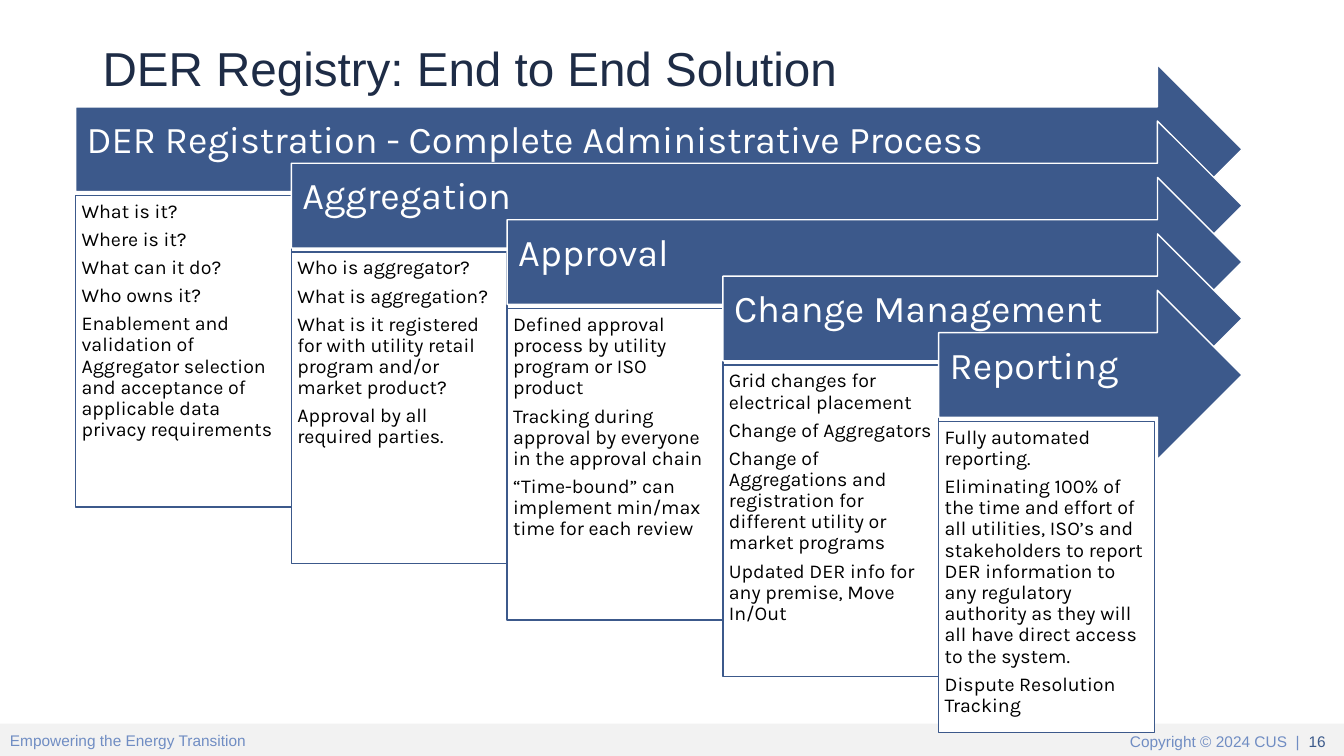
import pptx
import pptx.util
import pptx.dml.color
import pptx.enum.shapes
import pptx.enum.text

Inches, Pt = pptx.util.Inches, pptx.util.Pt
RGBColor = pptx.dml.color.RGBColor
SHAPE = pptx.enum.shapes.MSO_SHAPE
ALIGN = pptx.enum.text.PP_ALIGN
ANCHOR = pptx.enum.text.MSO_ANCHOR

# Content
TITLE = "DER Registry: End to End Solution"
SLOGAN = "Empowering the Energy Transition"
RIGHTS = "Copyright © 2024 CUS  |  "
NUMBER = "16 "
STAGES = [
    ("DER Registration - Complete Administrative Process", [
        "What is it?",
        "Where is it?",
        "What can it do?",
        "Who owns it?",
        "Enablement and validation of Aggregator selection and acceptance "
        "of applicable data privacy requirements",
    ]),
    ("Aggregation", [
        "Who is aggregator?",
        "What is aggregation?",
        "What is it registered for with utility retail program and/or "
        "market product?",
        "Approval by all required parties.",
    ]),
    ("Approval", [
        "Defined approval process by utility program or ISO product",
        "Tracking during approval by everyone in the approval chain",
        "“Time-bound” can implement min/max time for each review",
    ]),
    ("Change Management", [
        "Grid changes for electrical placement",
        "Change of Aggregators",
        "Change of Aggregations and registration for different utility "
        "or market programs",
        "Updated DER info for any premise, Move In/Out",
    ]),
    ("Reporting", [
        "Fully automated reporting.",
        "Eliminating 100% of the time and effort of all utilities, ISO’s and "
        "stakeholders to report DER information to any regulatory authority "
        "as they will all have direct access to the system.",
        "Dispute Resolution Tracking",
    ]),
]

# Colours
WHITE = RGBColor(0xFF, 0xFF, 0xFF)
BLACK = RGBColor(0x00, 0x00, 0x00)
NAVY = RGBColor(0x1E, 0x2C, 0x46)
BLUE = RGBColor(0x3C, 0x59, 0x8B)
PAGE = RGBColor(0x3C, 0x5A, 0x8B)
PALE = RGBColor(0x70, 0x8D, 0xC3)
GREY = RGBColor(0xF2, 0xF2, 0xF2)

# Layout in inches
LEFT, TOP, RIGHT = 0.75, 0.64, 12.32
STEP, DROP = 2.14, 0.56
ARROW, GAP, DETAIL = 1.68, 1.3, 3.09

deck = pptx.Presentation()
deck.slide_width, deck.slide_height = Inches(13.33), Inches(7.5)
slide = deck.slides.add_slide(deck.slide_layouts[6])


def write(shape, paras, size, color, font="Arial", align=ALIGN.LEFT,
          anchor=ANCHOR.TOP, inset=(0.1, 0.05, 0.1, 0.05), line=1.0, after=0):
    """Fill a shape with paragraphs, each a list of (text, colour) or a string."""
    frame = shape.text_frame
    frame.word_wrap = True
    frame.vertical_anchor = anchor
    (frame.margin_left, frame.margin_top,
     frame.margin_right, frame.margin_bottom) = map(Inches, inset)
    for i, runs in enumerate(paras):
        para = frame.add_paragraph() if i else frame.paragraphs[0]
        para.alignment = align
        para.line_spacing = line
        para.space_after = Pt(after)
        for text, tint in [(runs, color)] if isinstance(runs, str) else runs:
            run = para.add_run()
            run.text = text
            run.font.size = Pt(size)
            run.font.name = font
            run.font.color.rgb = tint


def draw(kind, left, top, width, height, fill, line=None):
    shape = slide.shapes.add_shape(kind, *map(Inches, (left, top, width, height)))
    shape.shadow.inherit = False
    shape.fill.solid()
    shape.fill.fore_color.rgb = fill
    if line is None:
        shape.line.fill.background()
    else:
        shape.line.color.rgb = line
        shape.line.width = Pt(1)
    return shape


def label(left, top, width, height, paras, size, color, **form):
    box = slide.shapes.add_textbox(*map(Inches, (left, top, width, height)))
    write(box, paras, size, color, **form)


# Footer
draw(SHAPE.RECTANGLE, 0, 7.18, 13.33, 0.32, GREY)
label(10.79, 7.21, 2.5, 0.29, [[(RIGHTS, PALE), (NUMBER, PAGE)]], 11, PALE,
      align=ALIGN.RIGHT, anchor=ANCHOR.MIDDLE)
label(0, 7.2, 3.1, 0.29, [SLOGAN], 11, PALE, anchor=ANCHOR.MIDDLE)

# Title
label(0.92, 0.4, 11.5, 1.45, [TITLE], 34, NAVY, line=0.9)

# Cascade of arrows, each with its detail box
for i, (name, notes) in enumerate(STAGES):
    left, top = LEFT + i * STEP, TOP + i * DROP
    arrow = draw(SHAPE.RIGHT_ARROW, left, top, RIGHT - left, ARROW, BLUE, WHITE)
    write(arrow, [name], 27, WHITE, font="Karla", anchor=ANCHOR.MIDDLE,
          inset=(0.11, 0.11, 0.28, 0.27), line=0.9)
    detail = draw(SHAPE.RECTANGLE, left, top + GAP, STEP, DETAIL, WHITE, BLUE)
    write(detail, notes, 14, BLACK, font="Karla", inset=(0.06,) * 4,
          line=0.9, after=4.9)

deck.save("out.pptx")
